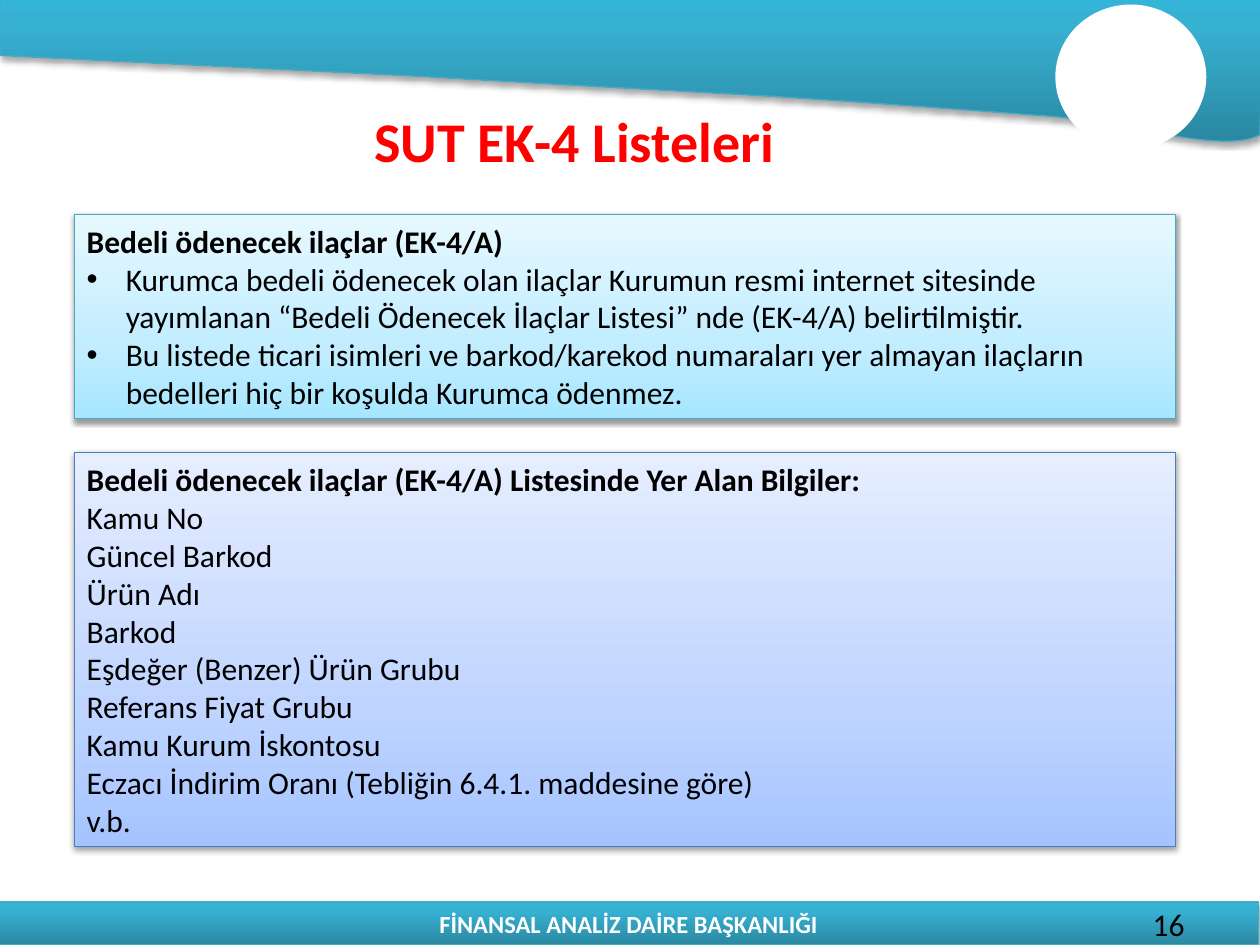
from lxml import etree
from pptx import Presentation
from pptx.dml.color import RGBColor
from pptx.enum.shapes import MSO_SHAPE
from pptx.enum.text import MSO_ANCHOR, PP_ALIGN
from pptx.oxml.ns import qn
from pptx.util import Inches, Pt

BAND_STOPS = [(0, "2A88A2"), (80, "37B1D2"), (100, "34B4D6")]


def style_text(paragraph, size, color, bold=False, align=PP_ALIGN.LEFT):
    paragraph.alignment = align
    for run in paragraph.runs:
        run.font.name = "Calibri"
        run.font.size = Pt(size)
        run.font.bold = bold
        run.font.color.rgb = RGBColor.from_string(color)


def style_surface(shape, stops, line_color, opacity, distance):
    """Give a shape an upward gradient, a thin line and a soft shadow below."""
    shape.fill.gradient()
    shape.fill.gradient_angle = 90
    stop_list = shape._element.spPr.find(qn("a:gradFill")).find(qn("a:gsLst"))
    for old_stop in list(stop_list):
        stop_list.remove(old_stop)
    for position, color in stops:
        stop = etree.SubElement(stop_list, qn("a:gs"), pos=str(position * 1000))
        etree.SubElement(stop, qn("a:srgbClr"), val=color)
    shape.line.color.rgb = RGBColor.from_string(line_color)
    shape.line.width = Pt(0.75)
    shape.shadow.inherit = False
    effects = shape._element.spPr.find(qn("a:effectLst"))
    shadow = etree.SubElement(effects, qn("a:outerShdw"), blurRad=str(Pt(3.1)),
                              dist=str(Pt(distance)), dir="5400000", rotWithShape="0")
    shadow_color = etree.SubElement(shadow, qn("a:srgbClr"), val="000000")
    etree.SubElement(shadow_color, qn("a:alpha"), val=str(opacity * 1000))


prs = Presentation()
prs.slide_width, prs.slide_height = Inches(10), Inches(7.5)
slide = prs.slides.add_slide(prs.slide_layouts[5])
shapes = slide.shapes

# Header band: its lower edge is two Bézier curves followed by straight runs
edge = [(10, 1.07)]
for curve in [[(10, 1.07), (9.71, 1.23), (8.96, 0.97), (8.3, 0.92)],
              [(8.3, 0.92), (7.64, 0.87), (6.7, 0.8), (6.05, 0.76)]]:
    for step in range(1, 25):
        t = step / 24
        weights = [(1 - t) ** 3, 3 * t * (1 - t) ** 2, 3 * t ** 2 * (1 - t), t ** 3]
        edge.append(tuple(sum(w * point[axis] for w, point in zip(weights, curve))
                          for axis in (0, 1)))
edge += [(4.44, 0.67), (3.22, 0.6), (1.41, 0.51), (0, 0.44)]
outline = shapes.build_freeform(Inches(0), Inches(-0.03))
outline.add_line_segments([(Inches(x), Inches(y)) for x, y in [(10.03, -0.03)] + edge])
header = outline.convert_to_shape()
style_surface(header, BAND_STOPS, "46AAC5", 35, 1.8)

emblem = shapes.add_shape(MSO_SHAPE.OVAL, Inches(8.39), Inches(0.05),
                          Inches(1.17), Inches(1.12))
emblem.fill.solid()
emblem.fill.fore_color.rgb = RGBColor.from_string("FFFFFF")
emblem.line.color.rgb = RGBColor.from_string("FFFFFF")
emblem.line.width = Pt(2)
emblem.shadow.inherit = False

# Footer band and page number
footer = shapes.add_shape(MSO_SHAPE.RECTANGLE, Inches(-0.01), Inches(7.16),
                          Inches(10), Inches(0.34))
style_surface(footer, BAND_STOPS, "46AAC5", 35, 1.8)
footer.text_frame.text = "FİNANSAL ANALİZ DAİRE BAŞKANLIĞI"
style_text(footer.text_frame.paragraphs[0], 14, "FFFFFF", True, PP_ALIGN.CENTER)

page_number = shapes.add_textbox(Inches(7.17), Inches(7.13), Inches(2.33), Inches(0.4))
page_number.text_frame.word_wrap = True
page_number.text_frame.vertical_anchor = MSO_ANCHOR.MIDDLE
page_number.text_frame.text = "16"
style_text(page_number.text_frame.paragraphs[0], 18, "000000", align=PP_ALIGN.RIGHT)

title = shapes.title
title.left, title.top = Inches(0.75), Inches(0.76)
title.width, title.height = Inches(7.72), Inches(0.71)
title.text_frame.text = "SUT EK-4 Listeleri "
title.text_frame.vertical_anchor = MSO_ANCHOR.MIDDLE
style_text(title.text_frame.paragraphs[0], 32, "FF0000", True, PP_ALIGN.CENTER)

# Panels: top, height, gradient, line colour, bulleted, heading and items
panels = [
    (1.7, 1.62, [(0, "A7E6FF"), (35, "C1EDFF"), (100, "E7F8FF")], "46AAC5", True, [
        "Bedeli ödenecek ilaçlar (EK-4/A)",
        "Kurumca bedeli ödenecek olan ilaçlar Kurumun resmi internet sitesinde "
        "yayımlanan “Bedeli Ödenecek İlaçlar Listesi” nde (EK-4/A) belirtilmiştir.",
        "Bu listede ticari isimleri ve barkod/karekod numaraları yer almayan ilaçların "
        "bedelleri hiç bir koşulda Kurumca ödenmez.",
    ]),
    (3.59, 3.13, [(0, "A4C4FF"), (35, "BFD4FF"), (100, "E6EEFF")], "4B7EBC", False, [
        "Bedeli ödenecek ilaçlar (EK-4/A) Listesinde Yer Alan Bilgiler:",
        "Kamu No",
        "Güncel Barkod",
        "Ürün Adı",
        "Barkod",
        "Eşdeğer (Benzer) Ürün Grubu",
        "Referans Fiyat Grubu",
        "Kamu Kurum İskontosu",
        "Eczacı İndirim Oranı (Tebliğin 6.4.1. maddesine göre)",
        "v.b.",
    ]),
]
for top, height, stops, line_color, bulleted, lines in panels:
    panel = shapes.add_shape(MSO_SHAPE.RECTANGLE, Inches(0.59), Inches(top),
                             Inches(8.74), Inches(height))
    style_surface(panel, stops, line_color, 38, 1.6)
    panel.text_frame.word_wrap = True
    panel.text_frame.text = "\n".join(lines)
    for index, paragraph in enumerate(panel.text_frame.paragraphs):
        if bulleted and index > 0:
            properties = paragraph._p.get_or_add_pPr()
            properties.set("marL", str(Inches(0.31)))
            properties.set("indent", str(Inches(-0.31)))
            etree.SubElement(properties, qn("a:buFont"), typeface="Arial")
            etree.SubElement(properties, qn("a:buChar"), char="•")
        style_text(paragraph, 18, "000000", bold=index == 0)

prs.save("out.pptx")
